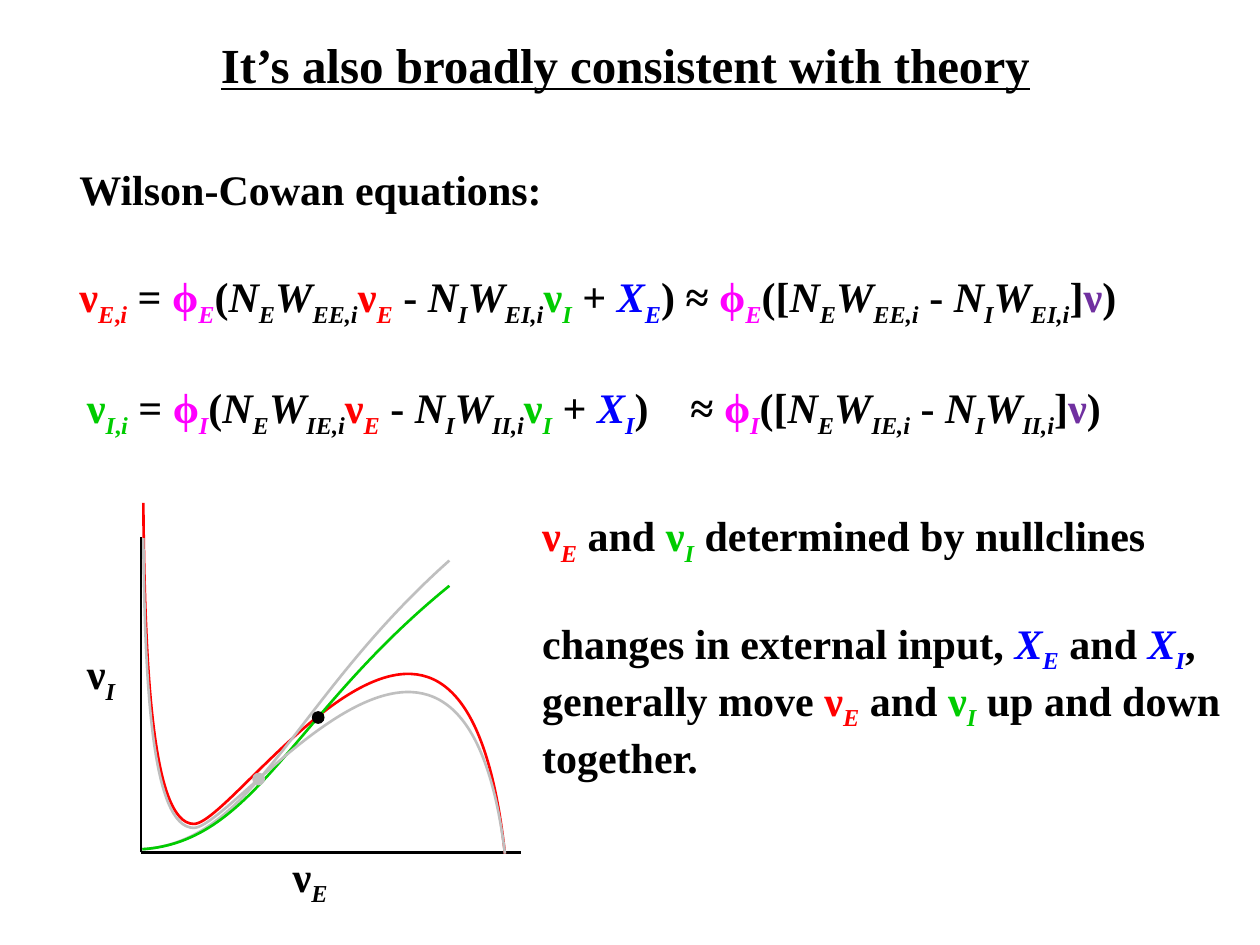
from dataclasses import dataclass

from lxml import etree
from pptx import Presentation
from pptx.dml.color import RGBColor
from pptx.enum import shapes, text
from pptx.oxml import ns
from pptx.util import Cm, Pt


@dataclass(frozen=True)
class Theme:
    font: str = "Times New Roman"
    title: float = 28
    body: float = 24
    line: float = 1.5
    rim: float = 0.75
    gap: float = 28.6
    ink: str = "000000"
    red: str = "FF0000"
    green: str = "00CC00"
    pink: str = "FF00FF"
    blue: str = "0000FF"
    violet: str = "7030A0"
    gray: str = "BFBFBF"


T = Theme()


def plain(words, color=T.ink):
    return [(words, color, False, False)]


def term(sign, sub, color=T.ink, slant=True):
    """Runs of a symbol with an italic subscript."""
    return [(sign, color, slant, False), (sub, color, True, True)]


def rate(sub, color=None):
    return term("ν", sub, color or (T.red if sub == "E" else T.green), False)


def local(pop):
    """Runs of the rate of one cell i, with an upright comma."""
    runs = rate(pop)
    color = runs[0][1]
    return runs + [(",", color, False, True), ("i", color, True, True)]


def gain(sub):
    return term("ϕ", sub, T.pink, False)


def drive(sub):
    return term("X", sub, T.blue)


def load(pop, src):
    """Runs of the weight N·W from population src to pop."""
    return term("N", src) + term("W", f"{pop}{src},i")


def model(pop, near):
    """Runs of one rate equation; near leads into the short form."""
    return (local(pop) + plain(" = ") + gain(pop) + plain("(")
            + load(pop, "E") + rate("E") + plain(" - ")
            + load(pop, "I") + rate("I") + plain(" + ") + drive(pop)
            + plain(near) + gain(pop) + plain("([")
            + load(pop, "E") + plain(" - ") + load(pop, "I")
            + plain("]") + plain("ν", T.violet) + plain(")"))


def write(para, runs, size=T.body, under=None):
    for words, color, slant, low in runs:
        run = para.add_run()
        run.text = words
        font = run.font
        font.name, font.size = T.font, Pt(size)
        font.bold, font.italic, font.underline = True, slant, under
        font.color.rgb = RGBColor.from_string(color)
        if low:
            run._r.get_or_add_rPr().set("baseline", "-25000")


def label(slide, box, paras, wrap=False, **style):
    frame = slide.shapes.add_textbox(*map(Cm, box)).text_frame
    frame.word_wrap = wrap
    frame.auto_size = text.MSO_AUTO_SIZE.SHAPE_TO_FIT_TEXT
    for i, runs in enumerate(paras):
        para = frame.add_paragraph() if i else frame.paragraphs[0]
        if i:
            para.space_before = Pt(T.gap)
        write(para, runs, **style)
    return frame.paragraphs[0]


def stop(para, pos):
    """Set a left tab stop."""
    tabs = etree.SubElement(para._p.get_or_add_pPr(), ns.qn("a:tabLst"))
    etree.SubElement(tabs, ns.qn("a:tab"), pos=str(Cm(pos)), algn="l")


def axes(slide, root, ends):
    group = slide.shapes.add_group_shape().shapes
    for end in ends:
        line = group.add_connector(
            shapes.MSO_CONNECTOR.STRAIGHT, *map(Cm, root + end))
        line.line.color.rgb = RGBColor.from_string(T.ink)
        line.line.width = Pt(T.line)
        etree.SubElement(line._element.spPr, ns.qn("a:effectLst"))


def bend(shape):
    """Turn each three line segments into one cubic Bézier arc."""
    steps = list(shape._element.iter(ns.qn("a:lnTo")))
    for i in range(0, len(steps), 3):
        arc = etree.Element(ns.qn("a:cubicBezTo"))
        steps[i].addprevious(arc)
        for step in steps[i:i + 3]:
            arc.append(step[0])
            step.getparent().remove(step)


def curve(slide, knots, color):
    first, *rest = [tuple(map(Cm, knot)) for knot in knots]
    pen = slide.shapes.build_freeform(*first)
    pen.add_line_segments(rest, close=False)
    shape = pen.convert_to_shape()
    bend(shape)
    shape.shadow.inherit = False
    shape.fill.background()
    shape.line.color.rgb = RGBColor.from_string(color)
    shape.line.width = Pt(T.line)


def dot(slide, left, top, color, size=0.23):
    shape = slide.shapes.add_shape(
        shapes.MSO_SHAPE.OVAL, *map(Cm, (left, top, size, size)))
    shape.shadow.inherit = False
    shape.fill.solid()
    shape.fill.fore_color.rgb = RGBColor.from_string(color)
    shape.line.color.rgb = RGBColor.from_string(color)
    shape.line.width = Pt(T.rim)


def graph(slide):
    axes(slide, (2.84, 17.18), [(10.5, 17.18), (2.84, 10.82)])
    end = (10.18, 17.21)
    curve(slide, [(2.89, 10.14), (2.92, 13.34), (3.05, 16.61), (3.91, 16.61),
                  (4.78, 16.61), (9.32, 9.42), end], T.red)
    rise = [(2.87, 17.12), (5.16, 16.97)]
    curve(slide, rise + [(5.89, 14.12), (9.06, 11.3)], T.gray)
    label(slide, (5.65, 17.02, 1.35, 1.27), [rate("E", T.ink)])
    label(slide, (1.5, 12.93, 1.17, 1.27), [rate("I", T.ink)])
    curve(slide, rise + [(5.89, 14.38), (9.06, 11.81)], T.green)
    curve(slide, [(2.89, 10.85), (2.92, 13.74), (3.05, 16.69), (3.91, 16.69),
                  (4.78, 16.66), (9.32, 10.21), end], T.gray)
    dot(slide, 5.1, 15.59, T.gray)
    dot(slide, 6.3, 14.35, T.ink)


def main():
    deck = Presentation()
    deck.slide_width, deck.slide_height = Cm(25.4), Cm(19.05)
    slide = deck.slides.add_slide(deck.slide_layouts[6])

    head = label(slide, (4.11, 0.57, 16.99, 1.45),
                 [plain("It’s also broadly consistent with theory")],
                 size=T.title, under=True)
    head.alignment = text.PP_ALIGN.CENTER
    label(slide, (1.35, 5.33, 22.96, 1.27), [model("E", ") ≈ ")])
    stop(label(slide, (1.5, 7.57, 22.68, 1.27), [model("I", ")\t≈ ")]), 12.17)
    label(slide, (1.35, 3.18, 9.93, 1.27), [plain("Wilson-Cowan equations:")])

    graph(slide)
    both = rate("E") + plain(" and ") + rate("I")
    label(slide, (10.68, 10.15, 14.22, 5.38), [
        both + plain(" determined by nullclines"),
        plain("changes in external input, ") + drive("E") + plain(" and ")
        + drive("I") + plain(", generally move ") + both
        + plain(" up and down together."),
    ], wrap=True)
    deck.save("out.pptx")


if __name__ == "__main__":
    main()
